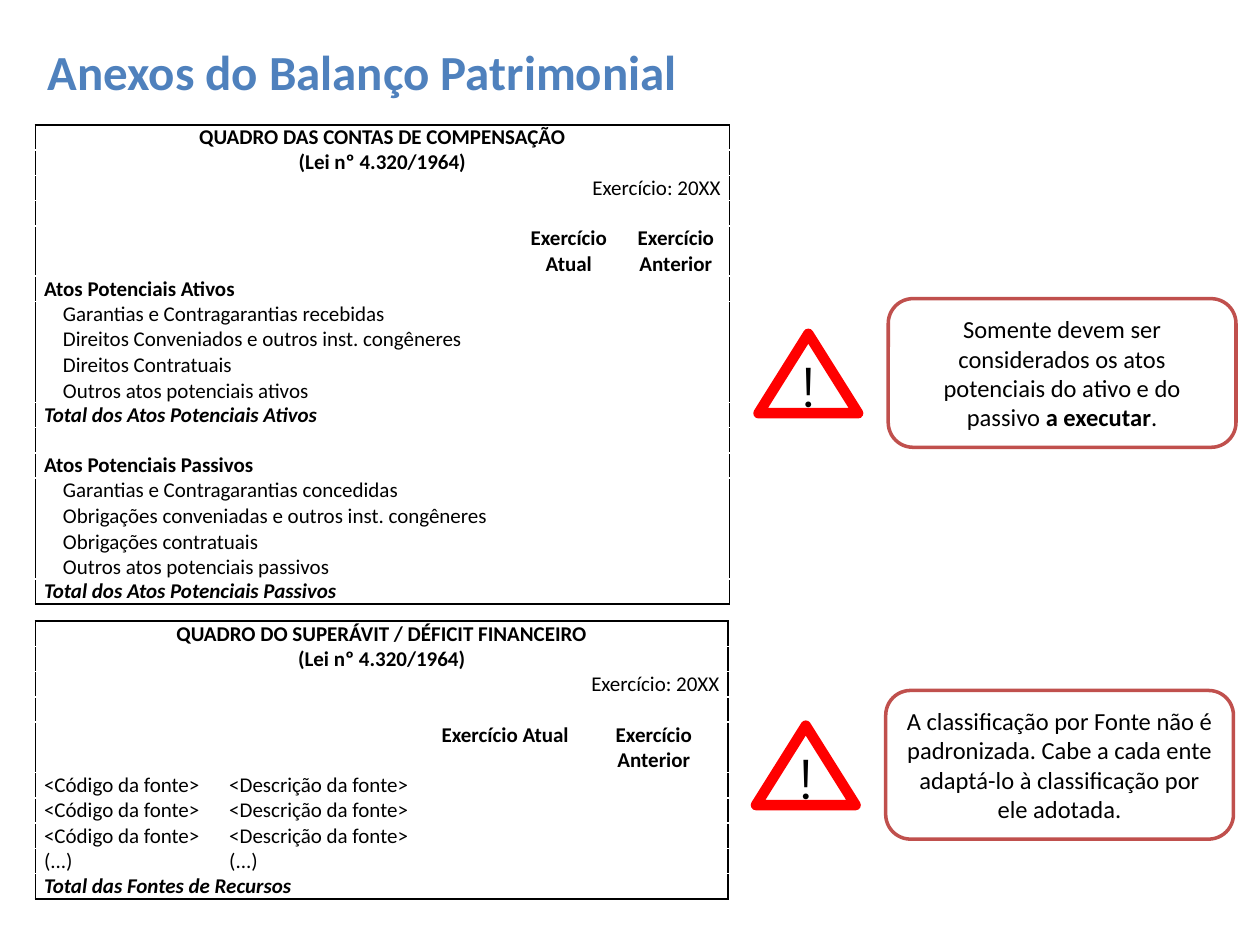
from lxml import etree
from pptx import Presentation
from pptx import util as u
from pptx.dml.color import RGBColor
from pptx.enum import shapes, text
from pptx.oxml.ns import qn

BLACK = RGBColor(0x00, 0x00, 0x00)
WHITE = RGBColor(0xFF, 0xFF, 0xFF)
BLUE = RGBColor(0x4F, 0x81, 0xBD)
RED = RGBColor(0xFF, 0x00, 0x00)
BRICK = RGBColor(0xC0, 0x50, 0x4D)
LEFT, CENTER, RIGHT, JUSTIFY = (
    text.PP_ALIGN.LEFT, text.PP_ALIGN.CENTER, text.PP_ALIGN.RIGHT, text.PP_ALIGN.JUSTIFY)

TITLE = "Anexos do Balanço Patrimonial"
LAW = "(Lei nº 4.320/1964)"
YEAR = "Exercício: 20XX"

# style: alignment, bold, italic, indent in inches
STYLES = {
    "head": (CENTER, True, False, 0),
    "year": (RIGHT, False, False, 0),
    "group": (LEFT, True, False, 0),
    "item": (LEFT, False, False, 0.15),
    "total": (LEFT, True, True, 0),
    "source": (JUSTIFY, False, False, 0),
}

# each row lists its cells as (column, span, style, paragraphs)
SOURCE_ROW = [(0, 2, "source", ["<Código da fonte>"]),
              (2, 2, "source", ["<Descrição da fonte>"])]
QUADROS = [
    {"top": 0.99, "columns": [0.67, 0.67, 2.47, 0.85, 0.85], "rows": [
        [(0, 5, "head", ["QUADRO DAS CONTAS DE COMPENSAÇÃO"])],
        [(0, 5, "head", [LAW])],
        [(3, 2, "year", [YEAR])],
        [],
        [(0, 3, "item", []), (3, 1, "head", ["Exercício", "Atual"]),
         (4, 1, "head", ["Exercício", "Anterior"])],
        [(0, 3, "group", ["Atos Potenciais Ativos"])],
        [(0, 3, "item", ["Garantias e Contragarantias recebidas",
                         "Direitos Conveniados e outros inst. congêneres",
                         "Direitos Contratuais",
                         "Outros atos potenciais ativos"])],
        [(0, 3, "total", ["Total dos Atos Potenciais Ativos"])],
        [(0, 3, "item", [])],
        [(0, 3, "group", ["Atos Potenciais Passivos"])],
        [(0, 3, "item", ["Garantias e Contragarantias concedidas",
                         "Obrigações conveniadas e outros inst. congêneres",
                         "Obrigações contratuais",
                         "Outros atos potenciais passivos"])],
        [(0, 3, "total", ["Total dos Atos Potenciais Passivos"])],
    ]},
    {"top": 4.93, "columns": [1.17, 0.3, 0.2, 1.47, 1.18, 1.18], "rows": [
        [(0, 6, "head", ["QUADRO DO SUPERÁVIT / DÉFICIT FINANCEIRO"])],
        [(0, 6, "head", [LAW])],
        [(1, 2, "item", []), (4, 2, "year", [YEAR])],
        [(1, 2, "item", [])],
        [(0, 4, "item", []), (4, 1, "head", ["Exercício Atual"]),
         (5, 1, "head", ["Exercício Anterior"])],
        SOURCE_ROW, SOURCE_ROW, SOURCE_ROW,
        [(0, 2, "source", ["(...)"]), (2, 2, "source", ["(...)"])],
        [(0, 4, "total", ["Total das Fontes de Recursos"])],
    ]},
]

# left and top of each warning, then its runs as (text, bold)
WARNINGS = [
    (6.02, 2.37, [("Somente devem ser considerados os atos potenciais do ativo e do passivo ", False),
                  ("a executar", True), (".", False)]),
    (6.0, 5.48, [("A classificação por Fonte não é padronizada. Cabe a cada ente "
                  "adaptá-lo à classificação por ele adotada.", False)]),
]

MARGIN = 0.28
LINE_HEIGHT = 0.2


def box(*lengths):
    return [u.Inches(length) for length in lengths]


def add_run(paragraph, words, size, color=BLACK, name="Calibri", bold=False, italic=False):
    run = paragraph.add_run()
    run.text = words
    formats = {"size": u.Pt(size), "name": name, "bold": bold, "italic": italic}
    for key, value in formats.items():
        setattr(run.font, key, value)
    run.font.color.rgb = color


def set_borders(cell, sides):
    for side in sides:
        line = etree.SubElement(cell._tc.get_or_add_tcPr(), qn(f"a:ln{side}"), w="12700")
        fill = etree.SubElement(line, qn("a:solidFill"))
        etree.SubElement(fill, qn("a:srgbClr"), val=str(BLACK))


def fill_cell(cell, style, lines):
    align, bold, italic, indent = STYLES[style]
    for index, line in enumerate(lines):
        frame = cell.text_frame
        paragraph = frame.paragraphs[0] if index == 0 else frame.add_paragraph()
        paragraph.alignment = align
        if indent:
            paragraph._p.get_or_add_pPr().set("marL", str(u.Inches(indent)))
        add_run(paragraph, line, 12, bold=bold, italic=italic)


def add_quadro(slide, top, columns, rows):
    heights = [LINE_HEIGHT * max([len(cell[3]) for cell in row] + [1]) for row in rows]
    if any("Exercício Anterior" in cell[3] for row in rows for cell in row):
        heights[4] = 2 * LINE_HEIGHT  # this heading wraps
    table = slide.shapes.add_table(len(rows), len(columns),
                                   *box(MARGIN, top, sum(columns), sum(heights))).table
    table.first_row = table.horz_banding = False
    for column, width in zip(table.columns, columns):
        column.width = u.Inches(width)
    for r, (row, height) in enumerate(zip(rows, heights)):
        table.rows[r].height = u.Inches(height)
        spans = {col: span for col, span, _, _ in row}
        for c in range(len(columns)):
            cell = table.cell(r, c)
            cell.margin_left = cell.margin_right = u.Inches(0.07)
            cell.margin_top = cell.margin_bottom = 0
            edges = {"L": c == 0, "R": c + spans.get(c, 1) == len(columns),
                     "T": r == 0, "B": r == len(rows) - 1}
            set_borders(cell, [side for side, drawn in edges.items() if drawn])
            cell.fill.solid()
            cell.fill.fore_color.rgb = WHITE
            # keeps empty cells one line high
            etree.SubElement(cell.text_frame.paragraphs[0]._p, qn("a:endParaRPr"), sz="1200")
        for col, span, style, lines in row:
            cell = table.cell(r, col)
            if span > 1:
                cell.merge(table.cell(r, col + span - 1))
            fill_cell(cell, style, lines)


def add_outlined(parent, kind, place, color, width):
    shape = parent.shapes.add_shape(kind, *box(*place))
    shape.shadow.inherit = False
    shape.fill.solid()
    shape.fill.fore_color.rgb = WHITE
    shape.line.color.rgb = color
    shape.line.width = u.Pt(width)
    return shape


def add_warning(slide, left, top, runs):
    sign = slide.shapes.add_group_shape()
    triangle = add_outlined(sign, shapes.MSO_SHAPE.ISOSCELES_TRIANGLE,
                            (left, top + 0.28, 0.79, 0.63), RED, 6)
    etree.SubElement(triangle.line._get_or_add_ln(), qn("a:round"))
    mark = sign.shapes.add_textbox(*box(left + 0.24, top + 0.37, 0.31, 0.64)).text_frame
    mark.word_wrap = True
    mark.paragraphs[0].alignment = CENTER
    add_run(mark.paragraphs[0], "!", 32, name="Montserrat")

    note = add_outlined(slide, shapes.MSO_SHAPE.ROUNDED_RECTANGLE,
                        (left + 1.03, top, 2.76, 1.18), BRICK, 2).text_frame
    note.word_wrap = True
    note.vertical_anchor = text.MSO_ANCHOR.MIDDLE
    note.paragraphs[0].alignment = CENTER
    for words, bold in runs:
        add_run(note.paragraphs[0], words, 14, bold=bold)


def main():
    deck = Presentation()
    deck.slide_width, deck.slide_height = box(10, 7.5)
    slide = deck.slides.add_slide(deck.slide_layouts[6])
    title = slide.shapes.add_textbox(*box(MARGIN, 0.21, 9, 0.71)).text_frame
    title.word_wrap = True
    title.vertical_anchor = text.MSO_ANCHOR.MIDDLE
    add_run(title.paragraphs[0], TITLE, 28, BLUE, bold=True)
    for quadro in QUADROS:
        add_quadro(slide, **quadro)
    for warning in WARNINGS:
        add_warning(slide, *warning)
    deck.save("out.pptx")


if __name__ == "__main__":
    main()
